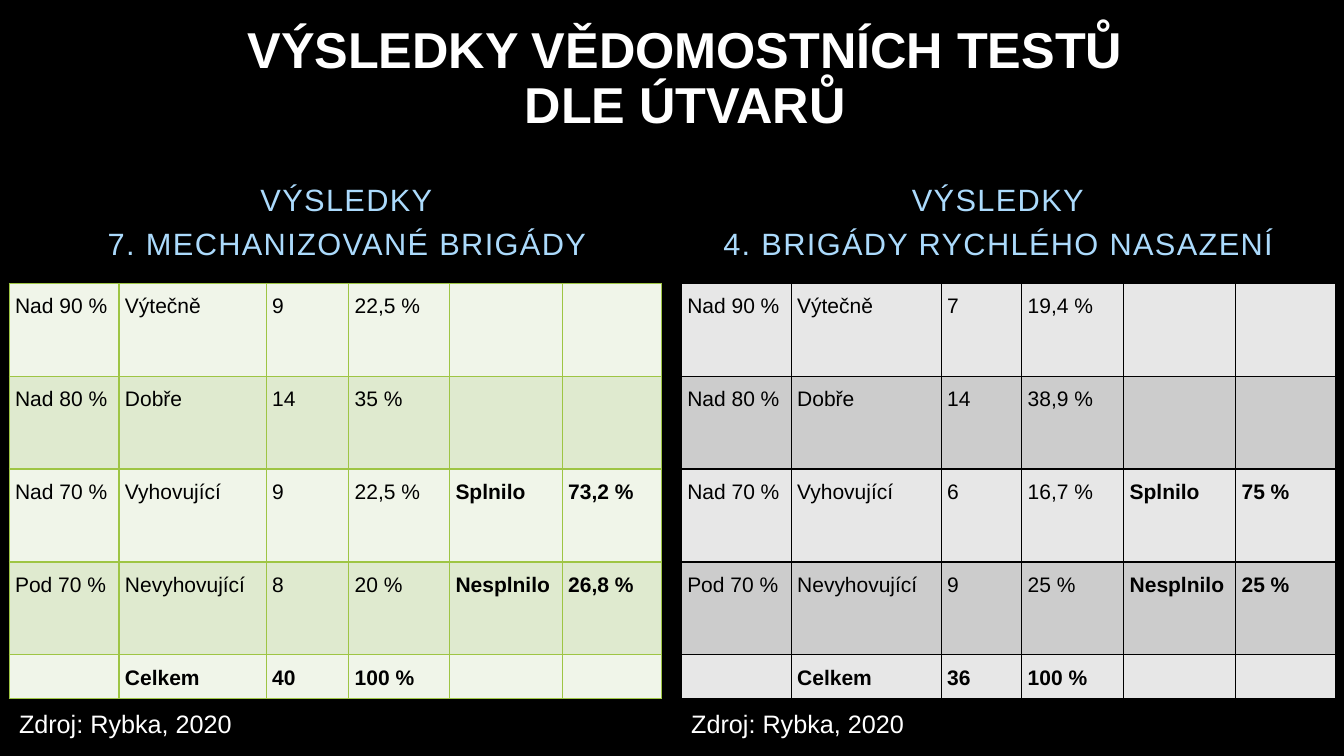
from lxml.etree import SubElement
from pptx import Presentation
from pptx.dml.color import RGBColor
from pptx.enum.text import MSO_ANCHOR as Anchor, MSO_AUTO_SIZE as AutoSize, PP_ALIGN as Align
from pptx.oxml.ns import qn
from pptx.util import Cm, Pt

ROW_LABELS = [("Nad 90 %", "Výtečně"), ("Nad 80 %", "Dobře"), ("Nad 70 %", "Vyhovující"),
              ("Pod 70 %", "Nevyhovující"), ("", "Celkem")]
VERDICTS = {2: "Splnilo", 3: "Nesplnilo"}

BRIGADES = [
    dict(left=0.23, heading="VÝSLEDKY\v7. MECHANIZOVANÉ BRIGÁDY",
         heading_box=(1.42, 4.17, 14.66, 2.56),
         counts=["9", "14", "9", "8", "40"],
         shares=["22,5 %", "35 %", "22,5 %", "20 %", "100 %"],
         verdict_shares={2: "73,2 %", 3: "26,8 %"},
         widths=[2.77, 3.71, 2.08, 2.54, 2.84, 2.51],
         bands=["F0F5E9", "DFEACF"], border="9EC544"),
    dict(left=17.17, heading="VÝSLEDKY\v4. BRIGÁDY RYCHLÉHO NASAZENÍ",
         heading_box=(17.48, 5.16, 15.37, 1.57),
         counts=["7", "14", "6", "9", "36"],
         shares=["19,4 %", "38,9 %", "16,7 %", "25 %", "100 %"],
         verdict_shares={2: "75 %", 3: "25 %"},
         widths=[2.77, 3.78, 2.03, 2.57, 2.82, 2.51],
         bands=["E7E7E7", "CCCCCC"], border="000000"),
]


def rgb(value):
    return RGBColor.from_string(value)


def table_rows(brigade):
    """Join the shared row labels with the figures of one brigade."""
    return [[*labels, count, share, VERDICTS.get(i, ""), brigade["verdict_shares"].get(i, "")]
            for i, (labels, count, share)
            in enumerate(zip(ROW_LABELS, brigade["counts"], brigade["shares"]))]


class TestResultsSlide:
    font = "Arial"
    white, black, light_blue = "FFFFFF", "000000", "ABDAFC"

    def __init__(self, prs):
        self.s = prs.slides.add_slide(prs.slide_layouts[4])
        self.s.background.fill.solid()
        self.s.background.fill.fore_color.rgb = rgb(self.black)
        for index in (2, 4):
            unused = self.s.placeholders[index].element
            unused.getparent().remove(unused)

    def style(self, p, size, color, bold=False):
        p.font.name, p.font.size, p.font.bold = self.font, Pt(size), bold
        p.font.color.rgb = rgb(color)

    def placeholder(self, index, text, box, size, color, anchor, spacing, bold=False):
        sp = self.s.placeholders[index]
        sp.left, sp.top, sp.width, sp.height = map(Cm, box)
        tf = sp.text_frame
        tf.text = text
        tf.auto_size, tf.vertical_anchor = AutoSize.NONE, anchor
        p = tf.paragraphs[0]
        p.alignment, p.line_spacing = Align.CENTER, spacing
        self.style(p, size, color, bold)
        return p

    def title(self, text):
        self.placeholder(0, text, (5.08, 0.28, 24.38, 3.45), 36, self.white,
                         Anchor.MIDDLE, 0.9, bold=True)

    def heading(self, index, text, box):
        p = self.placeholder(index, text, box, 22, self.light_blue, Anchor.BOTTOM, 1.2)
        p.space_before = Pt(10)
        for r in p.runs:
            r.font.size = Pt(22)
            r._r.get_or_add_rPr().set("spc", "100")

    def table(self, left, rows, widths, bands, border):
        heights = [2.34] * 4 + [1.1]
        tbl = self.s.shapes.add_table(len(rows), len(widths), Cm(left), Cm(7.14),
                                      Cm(sum(widths)), Cm(sum(heights))).table
        tbl.first_row = tbl.horz_banding = False
        for column, width in zip(tbl.columns, widths):
            column.width = Cm(width)
        for i, (row, height) in enumerate(zip(rows, heights)):
            tbl.rows[i].height = Cm(height)
            for j, text in enumerate(row):
                bold = j >= 4 or i == len(rows) - 1
                self.cell(tbl.cell(i, j), text, bands[i % 2], border, bold)

    def cell(self, cell, text, fill, border, bold):
        self.borders(cell, border)
        cell.fill.solid()
        cell.fill.fore_color.rgb = rgb(fill)
        cell.margin_left = cell.margin_right = Cm(0.15)
        cell.margin_top = cell.margin_bottom = 0
        cell.text = text
        p = cell.text_frame.paragraphs[0]
        p.alignment, p.line_spacing, p.space_after = Align.JUSTIFY, 1.5, Pt(7.1)
        self.style(p, 15, self.black, bold)

    def borders(self, cell, color):
        tcPr = cell._tc.get_or_add_tcPr()
        for side in ("a:lnL", "a:lnR", "a:lnT", "a:lnB"):
            ln = SubElement(tcPr, qn(side), w=str(Pt(1)))
            SubElement(SubElement(ln, qn("a:solidFill")), qn("a:srgbClr"), val=color)

    def source_note(self, left, text):
        tf = self.s.shapes.add_textbox(Cm(left), Cm(17.73), Cm(8.64), Cm(1.02)).text_frame
        tf.word_wrap, tf.auto_size = True, AutoSize.SHAPE_TO_FIT_TEXT
        tf.text = text
        self.style(tf.paragraphs[0], 18, self.white)


def main():
    prs = Presentation()
    prs.slide_width, prs.slide_height = Cm(33.87), Cm(19.05)
    slide = TestResultsSlide(prs)
    slide.title("VÝSLEDKY VĚDOMOSTNÍCH TESTŮ DLE ÚTVARŮ")
    for index, brigade in zip((1, 3), BRIGADES):
        slide.heading(index, brigade["heading"], brigade["heading_box"])
        slide.table(brigade["left"], table_rows(brigade), brigade["widths"],
                    brigade["bands"], brigade["border"])
        slide.source_note(brigade["left"], "Zdroj: Rybka, 2020")
    prs.save("out.pptx")


if __name__ == "__main__":
    main()
